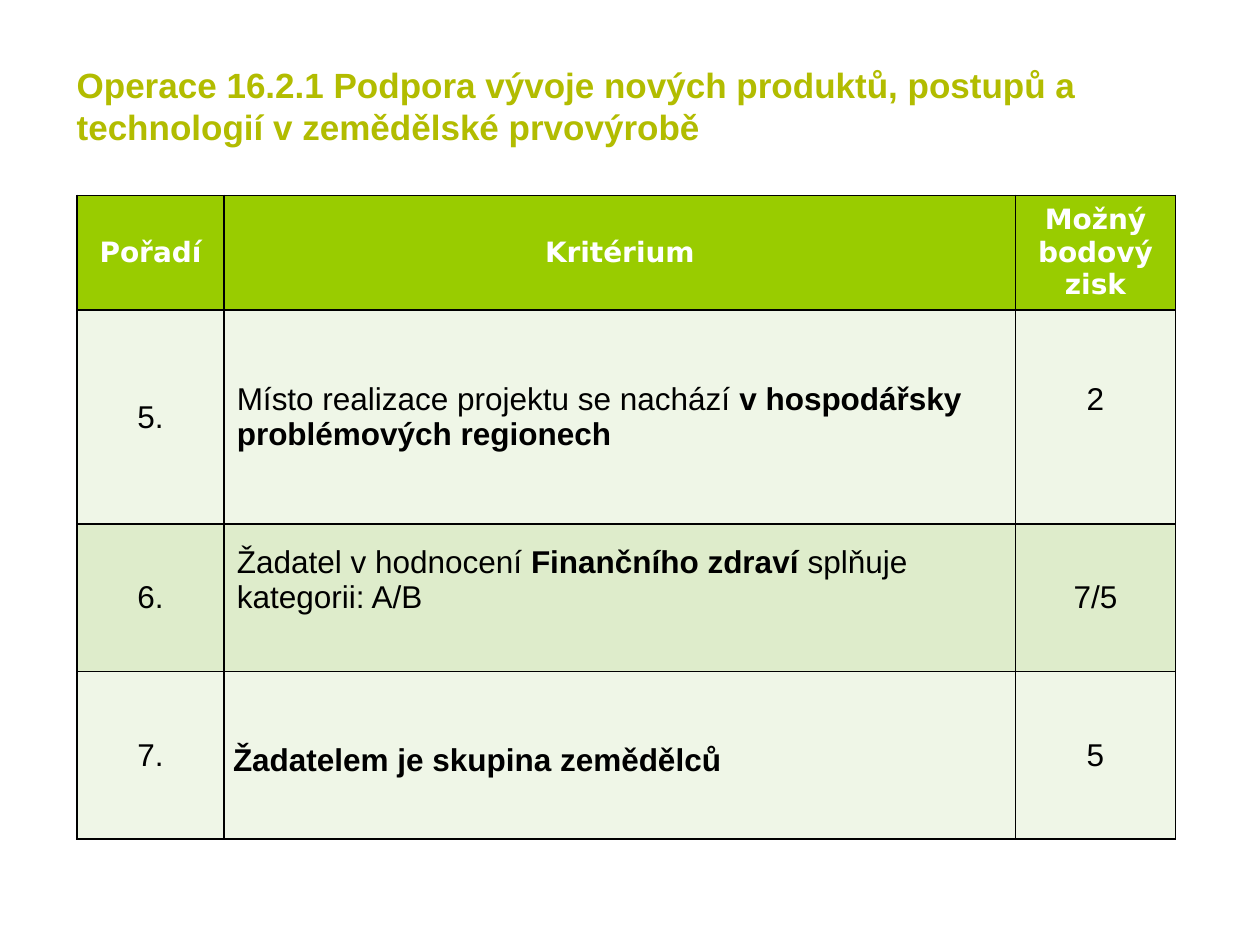
"""Build a slide with a table of scoring criteria."""
from pptx import Presentation
from pptx.dml.color import RGBColor
from pptx.enum.text import MSO_ANCHOR, PP_ALIGN
from pptx.oxml import parse_xml
from pptx.oxml.ns import nsdecls
from pptx.util import Inches, Pt

HUES = {"title": "B2BC00", "head": "99CC00", "pale": "EFF6E7",
        "green": "DEECCB", "white": "FFFFFF", "black": "000000"}
COLS = [1.17, 6.28, 1.27]
ROWS = [0.91, 1.7, 1.17, 1.33]
FILLS = ["head", "pale", "green", "pale"]
CELLS = [
    ["Pořadí", "Kritérium", "Možný bodový zisk"],
    ["5.", "Místo realizace projektu se nachází |v hospodářsky problémových regionech", "2"],
    ["6.", "Žadatel v hodnocení |Finančního zdraví |splňuje kategorii: A/B", "7/5"],
    ["7.", "|Žadatelem je skupina zemědělců", "5"],
]
LOW = {(1, 2), (3, 1)}


def style(font, name, size, hue):
    font.name, font.size = name, Pt(size)
    font.color.rgb = RGBColor.from_string(HUES[hue])


def border(cell):
    props = cell._tc.get_or_add_tcPr()
    for side in "LRTB":
        props.append(parse_xml(
            f'<a:ln{side} {nsdecls("a")} w="12700"><a:solidFill>'
            f'<a:srgbClr val="{HUES["black"]}"/></a:solidFill></a:ln{side}>'))


deck = Presentation()
deck.slide_width, deck.slide_height = Inches(10), Inches(7.5)
slide = deck.slides.add_slide(deck.slide_layouts[6])

title = slide.shapes.add_textbox(Inches(0.51), Inches(0.52), Inches(8.82), Inches(1.02))
frame = title.text_frame
frame.word_wrap = True
frame.vertical_anchor = MSO_ANCHOR.BOTTOM
frame.margin_bottom = Inches(0.37)
para = frame.paragraphs[0]
para.text = "Operace 16.2.1 Podpora vývoje nových produktů, postupů a technologií v zemědělské prvovýrobě"
style(para.font, "Arial", 20, "title")
para.font.bold = True

table = slide.shapes.add_table(len(ROWS), len(COLS), Inches(0.61), Inches(1.55),
                               Inches(sum(COLS)), Inches(sum(ROWS))).table
for col, width in zip(table.columns, COLS):
    col.width = Inches(width)
for row, height in zip(table.rows, ROWS):
    row.height = Inches(height)

for r, texts in enumerate(CELLS):
    for c, text in enumerate(texts):
        cell = table.cell(r, c)
        border(cell)
        cell.fill.solid()
        cell.fill.fore_color.rgb = RGBColor.from_string(HUES[FILLS[r]])
        low = (r, c) in LOW
        cell.vertical_anchor = MSO_ANCHOR.TOP if low else MSO_ANCHOR.MIDDLE
        cell.margin_left = cell.margin_right = Inches(0.07 if low else 0.1)
        cell.margin_top = Inches(0.57 if low else 0.05)
        cell.margin_bottom = Inches(0.33 if (r, c) == (2, 1) else 0.05)
        para = cell.text_frame.paragraphs[0]
        para.alignment = PP_ALIGN.LEFT if r and c == 1 else PP_ALIGN.CENTER
        if r:
            style(para.font, "Arial", 18, "black")
        else:
            style(para.font, "DejaVu Sans", 16, "white")
        for i, part in enumerate(text.split("|")):
            if part:
                run = para.add_run()
                run.text = part
                run.font.bold = r == 0 or i % 2 == 1

deck.save("out.pptx")
